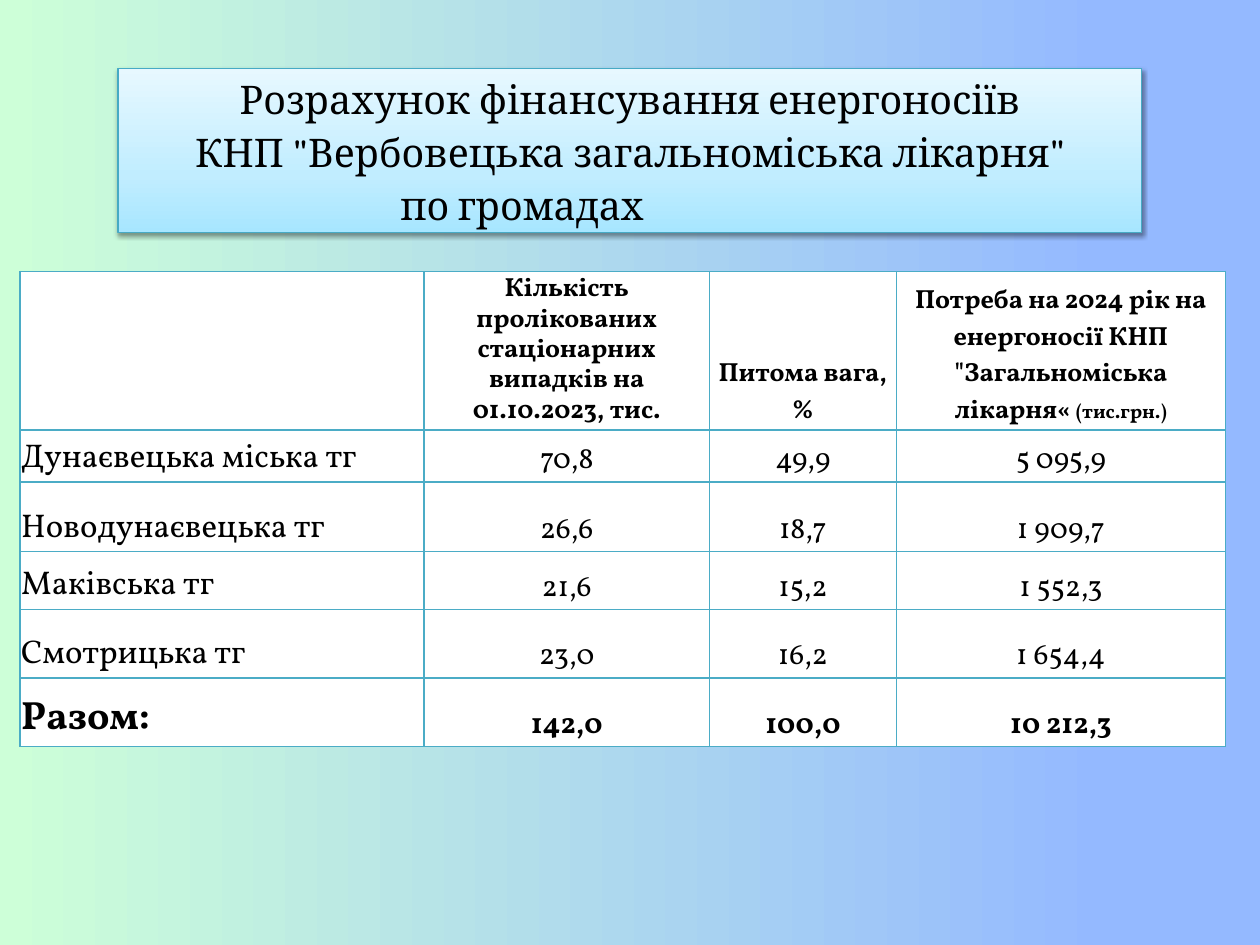
from pptx import Presentation
from pptx import oxml
from pptx import util as u
from pptx.dml import color
from pptx.enum import text
from pptx.oxml import ns

HUES = {"ink": "000000", "white": "FFFFFF", "edge": "46AAC5", "grid": "4BACC6"}
BACK = [(0, "CDFFD8"), (88, "94B9FF")]
PANEL = [(0, "A7E6FF"), (35, "C1EDFF"), (100, "E7F8FF")]
TITLE = [
    "Розрахунок фінансування енергоносіїв",
    'КНП "Вербовецька загальноміська лікарня"',
    "по громадах",
]
HEADS = [
    "",
    "Кількість пролікованих стаціонарних випадків на 01.10.2023, тис.",
    "Питома вага, %",
    'Потреба на 2024 рік на енергоносії КНП "Загальноміська лікарня« ',
]
ROWS = [
    ["Дунаєвецька міська тг", "70,8", "49,9", "5 095,9"],
    ["Новодунаєвецька тг", "26,6", "18,7", "1 909,7"],
    ["Маківська тг", "21,6", "15,2", "1 552,3"],
    ["Смотрицька тг", "23,0", "16,2", "1 654,4"],
    ["Разом:", "142,0", "100,0", "10 212,3"],
]
WIDTHS = [3.42, 2.42, 1.58, 2.79]
HEIGHTS = [1.34, 0.44, 0.59, 0.49, 0.58, 0.58]
MID, LEFT = text.PP_ALIGN.CENTER, text.PP_ALIGN.LEFT


def rgb(name):
    """Return the named colour."""
    return color.RGBColor.from_string(HUES[name])


def put(par, words, size=18, font="Vollkorn", bold=False, align=MID, lead=None):
    """Add a formatted run to a paragraph."""
    par.alignment = align
    if lead:
        par.line_spacing = u.Pt(lead)
    run = par.add_run()
    run.text = words
    run.font.size, run.font.name, run.font.bold = u.Pt(size), font, bold
    run.font.color.rgb = rgb("ink")


def blend(fill, root, stops, angle):
    """Fill with a gradient of the given stops."""
    fill.gradient()
    fill.gradient_angle = angle
    marks = root.find(".//" + ns.qn("a:gsLst"))
    for mark in list(marks):
        marks.remove(mark)
    for pos, hue in stops:
        marks.append(oxml.parse_xml(
            f'<a:gs {ns.nsdecls("a")} pos="{pos * 1000}"><a:srgbClr val="{hue}"/></a:gs>'))


def shade(box):
    """Give a shape a soft shadow below it."""
    box.shadow.inherit = False
    effects = box.element.spPr.find(ns.qn("a:effectLst"))
    effects.append(oxml.parse_xml(
        f'<a:outerShdw {ns.nsdecls("a")} blurRad="{u.Pt(3.1)}" dist="{u.Pt(1.6)}" '
        'dir="5400000" rotWithShape="0"><a:srgbClr val="000000">'
        '<a:alpha val="38000"/></a:srgbClr></a:outerShdw>'))


def head(slide):
    """Format the title placeholder as a panel."""
    box = slide.shapes.title
    box.left, box.top = u.Inches(1), u.Inches(0.58)
    box.width, box.height = u.Inches(8.67), u.Inches(1.39)
    blend(box.fill, box.element, PANEL, 90)
    box.line.color.rgb, box.line.width = rgb("edge"), u.Pt(0.75)
    shade(box)
    frame = box.text_frame
    frame.word_wrap, frame.auto_size = True, text.MSO_AUTO_SIZE.NONE
    frame.vertical_anchor = text.MSO_ANCHOR.MIDDLE
    frame.margin_left = frame.margin_right = frame.margin_top = 0
    frame.margin_bottom = u.Inches(0.03)
    for i, line in enumerate(TITLE):
        par = frame.add_paragraph() if i else frame.paragraphs[0]
        put(par, line, size=24, font="Cambria", lead=32.5)
    par.alignment = LEFT
    par._p.get_or_add_pPr().set("marL", str(u.Inches(2.39)))


def frame_cell(cell):
    """Set the borders, fill and insets of a cell."""
    props = cell._tc.get_or_add_tcPr()
    for side in "LRTB":
        props.append(oxml.parse_xml(
            f'<a:ln{side} {ns.nsdecls("a")} w="{u.Pt(1)}"><a:solidFill>'
            f'<a:srgbClr val="{HUES["grid"]}"/></a:solidFill></a:ln{side}>'))
    cell.fill.solid()
    cell.fill.fore_color.rgb = rgb("white")
    cell.vertical_anchor = text.MSO_ANCHOR.BOTTOM
    cell.margin_left = cell.margin_right = cell.margin_top = u.Inches(0.01)
    cell.margin_bottom = 0


def grid(slide):
    """Build the table of needs by community."""
    table = slide.shapes.add_table(
        len(HEIGHTS), len(WIDTHS), u.Inches(0.17), u.Inches(2.3),
        u.Inches(sum(WIDTHS)), u.Inches(sum(HEIGHTS))).table
    table.first_row = table.horz_banding = False
    for col, width in zip(table.columns, WIDTHS):
        col.width = u.Inches(width)
    for row, height in zip(table.rows, HEIGHTS):
        row.height = u.Inches(height)
    for r, row in enumerate([HEADS] + ROWS):
        last = r == len(ROWS)
        for c, words in enumerate(row):
            cell = table.cell(r, c)
            frame_cell(cell)
            par = cell.text_frame.paragraphs[0]
            if r == 0 and words:
                put(par, words, size=16, bold=True, lead=18.5 if c == 1 else None)
            elif r and c == 0:
                put(par, words, size=24 if last else 20, bold=last, align=LEFT)
            elif r:
                put(par, words, bold=last)
    put(table.cell(0, 3).text_frame.paragraphs[0], "(тис.грн.)", size=12, bold=True)


def main():
    """Build and save the slide."""
    deck = Presentation()
    deck.slide_width, deck.slide_height = u.Inches(10.67), u.Inches(8)
    slide = deck.slides.add_slide(deck.slide_layouts[5])
    blend(slide.background.fill, slide.element, BACK, 0)
    head(slide)
    grid(slide)
    deck.save("out.pptx")


if __name__ == "__main__":
    main()
